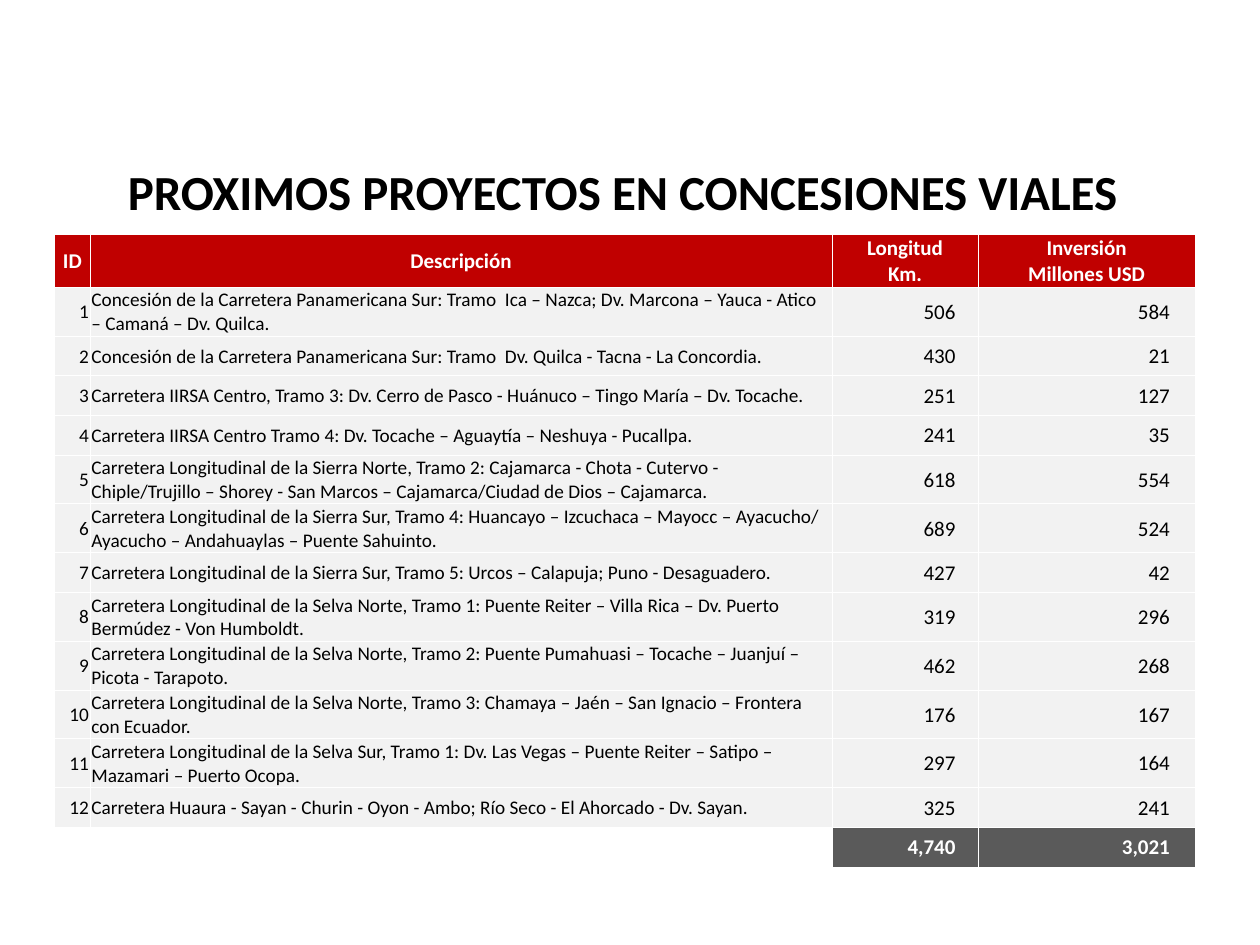
from lxml.etree import SubElement
from pptx import Presentation
from pptx.dml.color import RGBColor
from pptx.enum.text import MSO_ANCHOR, PP_ALIGN
from pptx.oxml.ns import qn
from pptx.util import Pt

FONT = "Calibri"
BLACK = RGBColor(0, 0, 0)
WHITE = RGBColor(255, 255, 255)
RED = RGBColor(0xC0, 0, 0)
PALE = RGBColor(0xF2, 0xF2, 0xF2)
GRAY = RGBColor(0x5A, 0x5A, 0x5A)

WIDTHS = [20.3, 424, 83.5, 124]
ROW = 22.7
INSET = 0.72
ALIGNS = [PP_ALIGN.RIGHT, PP_ALIGN.LEFT, PP_ALIGN.RIGHT, PP_ALIGN.RIGHT]
SIZES = [11, 11, 12, 12]
RIGHTS = [INSET, INSET, 13, 14.5]

HEADS = ["ID", "Descripción", "Longitud\nKm.", "Inversión\nMillones USD"]
ROADS = [
    ("Concesión de la Carretera Panamericana Sur: Tramo  Ica – Nazca; "
     "Dv. Marcona – Yauca - Atico – Camaná – Dv. Quilca.", 506, 584),
    ("Concesión de la Carretera Panamericana Sur: Tramo  Dv. Quilca - "
     "Tacna - La Concordia.", 430, 21),
    ("Carretera IIRSA Centro, Tramo 3: Dv. Cerro de Pasco - Huánuco – "
     "Tingo María – Dv. Tocache.", 251, 127),
    ("Carretera IIRSA Centro Tramo 4: Dv. Tocache – Aguaytía – Neshuya - "
     "Pucallpa.", 241, 35),
    ("Carretera Longitudinal de la Sierra Norte, Tramo 2: Cajamarca - Chota "
     "- Cutervo - Chiple/Trujillo – Shorey - San Marcos – Cajamarca/Ciudad "
     "de Dios – Cajamarca.", 618, 554),
    ("Carretera Longitudinal de la Sierra Sur, Tramo 4: Huancayo – Izcuchaca "
     "– Mayocc – Ayacucho/ Ayacucho – Andahuaylas – Puente Sahuinto.",
     689, 524),
    ("Carretera Longitudinal de la Sierra Sur, Tramo 5: Urcos – Calapuja; "
     "Puno - Desaguadero.", 427, 42),
    ("Carretera Longitudinal de la Selva Norte, Tramo 1: Puente Reiter – "
     "Villa Rica – Dv. Puerto Bermúdez - Von Humboldt.", 319, 296),
    ("Carretera Longitudinal de la Selva Norte, Tramo 2: Puente Pumahuasi – "
     "Tocache – Juanjuí – Picota - Tarapoto.", 462, 268),
    ("Carretera Longitudinal de la Selva Norte, Tramo 3: Chamaya – Jaén – "
     "San Ignacio – Frontera con Ecuador.", 176, 167),
    ("Carretera Longitudinal de la Selva Sur, Tramo 1: Dv. Las Vegas – "
     "Puente Reiter – Satipo – Mazamari – Puerto Ocopa.", 297, 164),
    ("Carretera Huaura - Sayan - Churin - Oyon - Ambo; Río Seco - "
     "El Ahorcado - Dv. Sayan.", 325, 241),
]
TOTALS = ["", "", "4,740", "3,021"]


def add_text(para, text, size, color, bold):
    for i, line in enumerate(text.split("\n")):
        if i:
            para.add_line_break()
        run = para.add_run()
        run.text = line
        font = run.font
        font.name, font.size, font.bold = FONT, Pt(size), bold
        font.color.rgb = color


def add_title(slide, text):
    title = slide.shapes.title
    title.left, title.top = Pt(31), Pt(88.5)
    title.width, title.height = Pt(649.5), Pt(41)
    frame = title.text_frame
    frame.word_wrap = True
    frame.vertical_anchor = MSO_ANCHOR.MIDDLE
    para = frame.paragraphs[0]
    para.alignment = PP_ALIGN.CENTER
    add_text(para, text, 28, BLACK, True)


def add_edges(cell):
    props = cell._tc.get_or_add_tcPr()
    for tag in ("a:lnL", "a:lnR", "a:lnT", "a:lnB"):
        line = SubElement(props, qn(tag), w=str(Pt(0.5)))
        fill = SubElement(line, qn("a:solidFill"))
        SubElement(fill, qn("a:srgbClr"), val=str(WHITE))


def fill_cell(cell, text, fill, color, size, align, right=INSET, bold=False):
    add_edges(cell)
    cell.margin_left, cell.margin_right = Pt(INSET), Pt(right)
    cell.margin_top, cell.margin_bottom = Pt(INSET), Pt(0)
    cell.vertical_anchor = MSO_ANCHOR.MIDDLE
    if not text:
        cell.fill.background()
        return
    cell.fill.solid()
    cell.fill.fore_color.rgb = fill
    para = cell.text_frame.paragraphs[0]
    para.alignment = align
    add_text(para, text, size, color, bold)


def add_roads(slide):
    count = len(ROADS) + 2
    table = slide.shapes.add_table(
        count, len(WIDTHS), Pt(31.2), Pt(134.1),
        Pt(sum(WIDTHS)), Pt(ROW * count)).table
    table.horz_banding = False
    for col, width in zip(table.columns, WIDTHS):
        col.width = Pt(width)
    for row in table.rows:
        row.height = Pt(ROW)

    # Header row
    for col, text in enumerate(HEADS):
        fill_cell(table.cell(0, col), text, RED, WHITE, 12,
                  PP_ALIGN.CENTER, bold=True)

    # One row per road
    for num, road in enumerate(ROADS, 1):
        for col, value in enumerate((num, *road)):
            fill_cell(table.cell(num, col), str(value), PALE, BLACK,
                      SIZES[col], ALIGNS[col], RIGHTS[col])

    # Totals
    for col, text in enumerate(TOTALS):
        fill_cell(table.cell(count - 1, col), text, GRAY, WHITE,
                  12, ALIGNS[col], RIGHTS[col], True)


def main():
    deck = Presentation()
    deck.slide_width, deck.slide_height = Pt(720), Pt(540)
    slide = deck.slides.add_slide(deck.slide_layouts[5])
    add_title(slide, "PROXIMOS PROYECTOS EN CONCESIONES VIALES")
    add_roads(slide)
    deck.save("out.pptx")


if __name__ == "__main__":
    main()
